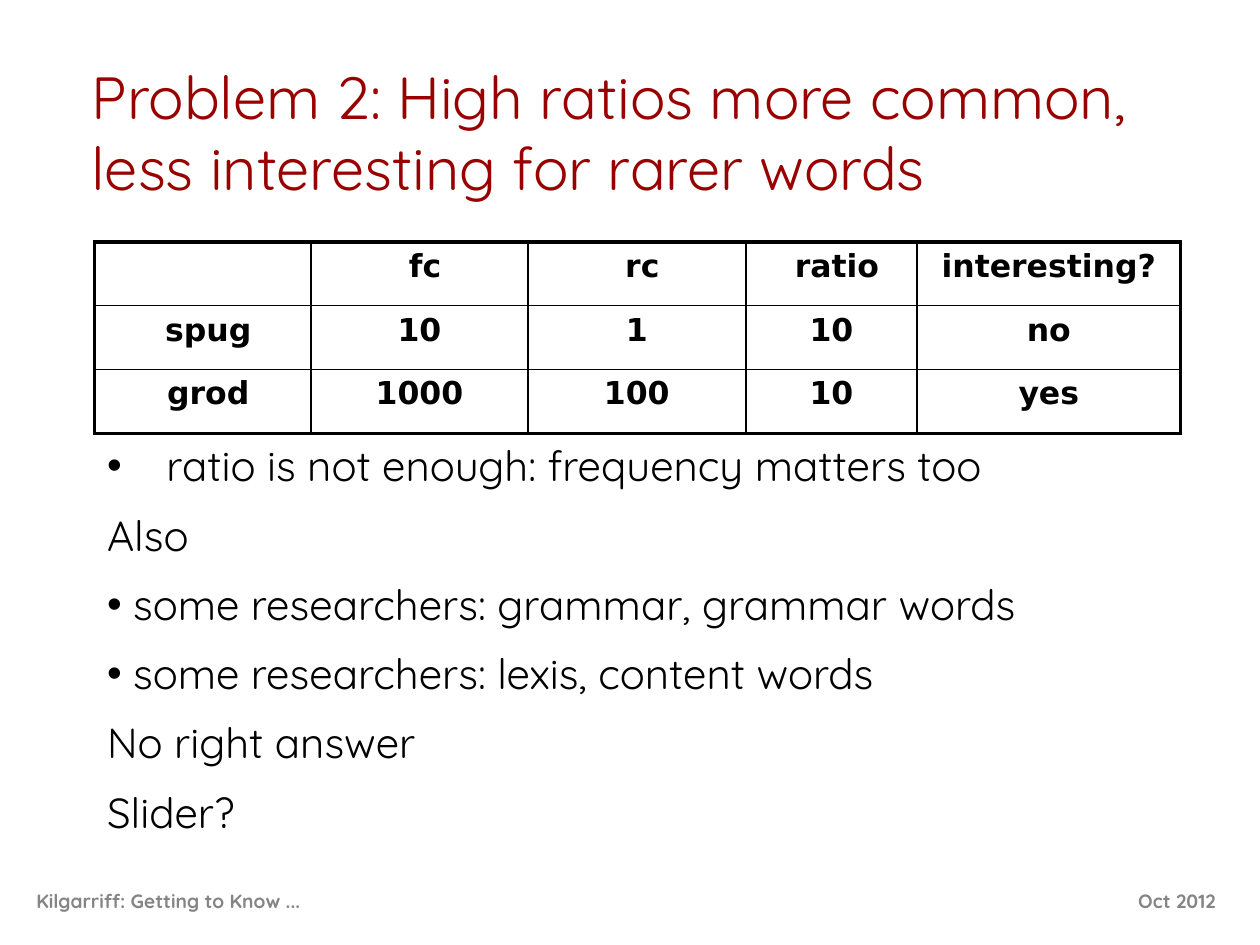
from dataclasses import dataclass

from lxml import etree
from pptx import Presentation
from pptx.dml.color import RGBColor
from pptx.enum.text import MSO_ANCHOR, MSO_AUTO_SIZE, PP_ALIGN
from pptx.oxml.ns import qn
from pptx.util import Inches, Pt

LEFT, CENTER, RIGHT = PP_ALIGN.LEFT, PP_ALIGN.CENTER, PP_ALIGN.RIGHT
TOP, MIDDLE, BOTTOM = MSO_ANCHOR.TOP, MSO_ANCHOR.MIDDLE, MSO_ANCHOR.BOTTOM
TITLE_AND_CONTENT = 1
GRID_COLUMNS, GRID_ROWS = 100, 75


@dataclass(frozen=True)
class TextStyle:
    font: str
    size: float
    color: str
    bold: bool = False


@dataclass(frozen=True)
class Theme:
    title: TextStyle = TextStyle("Quicksand", 34, "990000")
    body: TextStyle = TextStyle("Quicksand", 24, "000000")
    cell: TextStyle = TextStyle("DejaVu Sans", 18, "000000", True)
    footer: TextStyle = TextStyle("Quicksand", 11, "858585", True)
    border: str = "000000"
    outer_border: float = 2.25
    inner_border: float = 1
    paragraph_gap: float = 10.8


class SlideBuilder:
    def __init__(self, presentation, theme):
        self.theme = theme
        self.column = presentation.slide_width / GRID_COLUMNS
        self.row = presentation.slide_height / GRID_ROWS
        layout = presentation.slide_layouts[TITLE_AND_CONTENT]
        self.slide = presentation.slides.add_slide(layout)

    def area(self, left, top, width, height):
        """Turn grid columns and rows into slide lengths."""
        return (round(left * self.column), round(top * self.row),
                round(width * self.column), round(height * self.row))

    def place(self, shape, area):
        shape.left, shape.top, shape.width, shape.height = self.area(*area)

    def format_text(self, text_frame, style, alignment, anchor):
        text_frame.word_wrap = True
        text_frame.vertical_anchor = anchor
        for paragraph in text_frame.paragraphs:
            paragraph.alignment = alignment
            for run in paragraph.runs:
                run.font.name = style.font
                run.font.size = Pt(style.size)
                run.font.bold = style.bold
                run.font.color.rgb = RGBColor.from_string(style.color)

    def title(self, text, area):
        shape = self.slide.shapes.title
        self.place(shape, area)
        shape.text_frame.text = text
        shape.text_frame.auto_size = MSO_AUTO_SIZE.NONE
        self.format_text(shape.text_frame, self.theme.title, LEFT, BOTTOM)

    def body(self, items, area):
        """Fill the body with (text, has bullet, hanging indent in inches)."""
        shape = self.slide.placeholders[1]
        self.place(shape, area)
        text_frame = shape.text_frame
        text_frame.text = "\n".join(text for text, _, _ in items)
        text_frame.auto_size = MSO_AUTO_SIZE.NONE
        self.format_text(text_frame, self.theme.body, LEFT, TOP)
        for index, (paragraph, item) in enumerate(zip(text_frame.paragraphs, items)):
            _, has_bullet, hanging = item
            paragraph.space_before = Pt(self.theme.paragraph_gap if index else 0)
            properties = paragraph._p.get_or_add_pPr()
            properties.set("marL", str(Inches(hanging)))
            properties.set("indent", str(-Inches(hanging)))
            if has_bullet:
                etree.SubElement(properties, qn("a:buChar")).set("char", "•")
            else:
                etree.SubElement(properties, qn("a:buNone"))

    def table(self, rows, column_widths, area):
        row_count, column_count = len(rows), len(column_widths)
        table = self.slide.shapes.add_table(
            row_count, column_count, *self.area(*area)).table
        table.first_row = table.horz_banding = False
        for column, width in zip(table.columns, column_widths):
            column.width = round(width * self.column)
        for row_index, row in enumerate(rows):
            for column_index, text in enumerate(row):
                cell = table.cell(row_index, column_index)
                cell.text_frame.text = text
                self.format_text(cell.text_frame, self.theme.cell, CENTER, TOP)
                self.cell_borders(cell, {
                    "L": column_index == 0,
                    "R": column_index == column_count - 1,
                    "T": row_index == 0,
                    "B": row_index == row_count - 1,
                })
                cell.fill.background()

    def cell_borders(self, cell, outer_sides):
        properties = cell._tc.get_or_add_tcPr()
        for side, is_outer in outer_sides.items():
            width = self.theme.outer_border if is_outer else self.theme.inner_border
            line = etree.SubElement(properties, qn(f"a:ln{side}"), w=str(Pt(width)))
            fill = etree.SubElement(line, qn("a:solidFill"))
            etree.SubElement(fill, qn("a:srgbClr"), val=self.theme.border)

    def footer(self, text, area, alignment):
        text_frame = self.slide.shapes.add_textbox(*self.area(*area)).text_frame
        text_frame.text = text
        self.format_text(text_frame, self.theme.footer, alignment, MIDDLE)


def main():
    presentation = Presentation()
    presentation.slide_width, presentation.slide_height = Inches(10), Inches(7.5)
    builder = SlideBuilder(presentation, Theme())
    builder.footer("Oct 2012 ", (78.7, 69.5, 19.2, 4), RIGHT)
    builder.footer("Kilgarriff: Getting to Know ...", (1.9, 69.5, 65.7, 4), LEFT)
    builder.title(
        "Problem 2: High ratios more common, less interesting for rarer words",
        (6.3, 3.3, 89.5, 13.3))
    builder.table(
        [["", " fc", " rc", " ratio", "interesting?"],
         [" spug", "10", "1", "10", "no"],
         [" grod", "1000", "100", "10", "yes"]],
        [17.2, 17.2, 17.3, 13.6, 20.9], (7.5, 19.2, 86.2, 15.2))
    builder.body(
        [(" ratio is not enough: frequency matters too", True, 0.38),
         ("Also", False, 0),
         (" some researchers: grammar, grammar words", True, 0),
         (" some researchers: lexis, content words", True, 0),
         ("No right answer", False, 0),
         ("Slider?", False, 0)],
        (7.5, 34.4, 82.7, 35.3))
    presentation.save("out.pptx")


if __name__ == "__main__":
    main()
